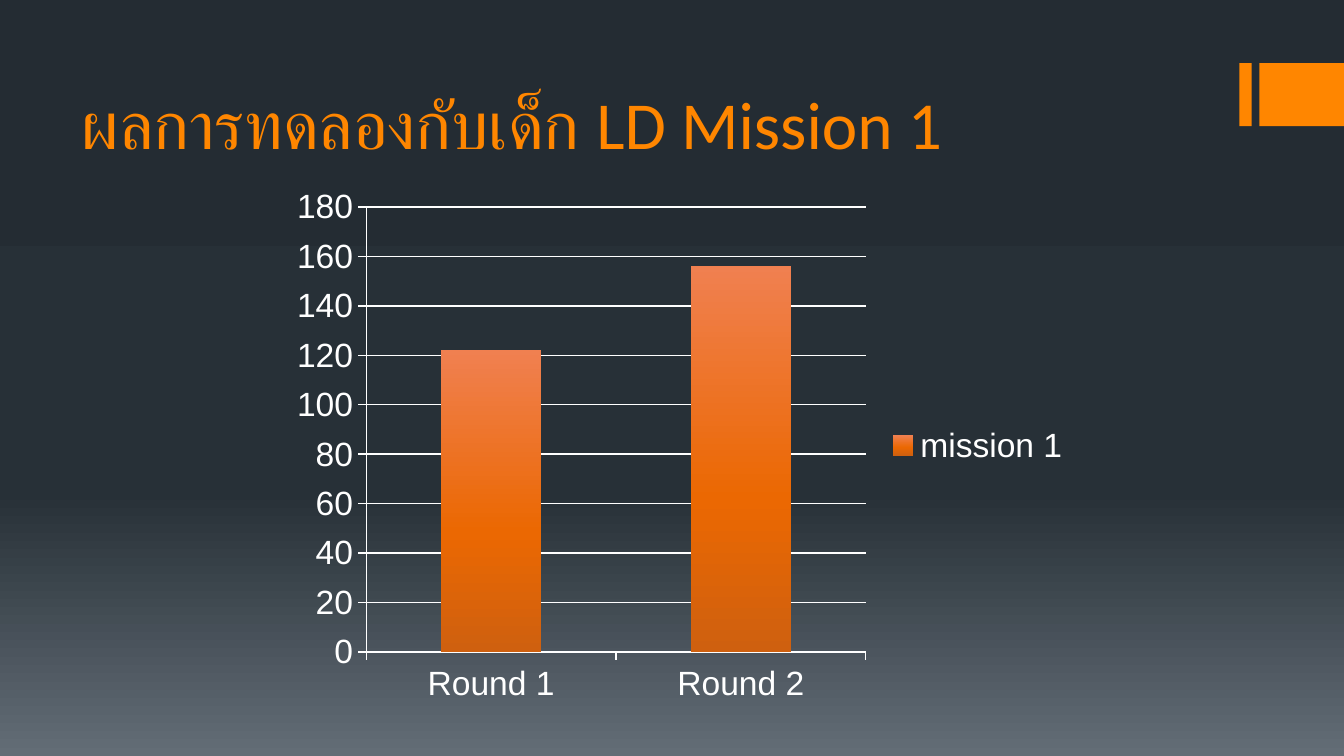
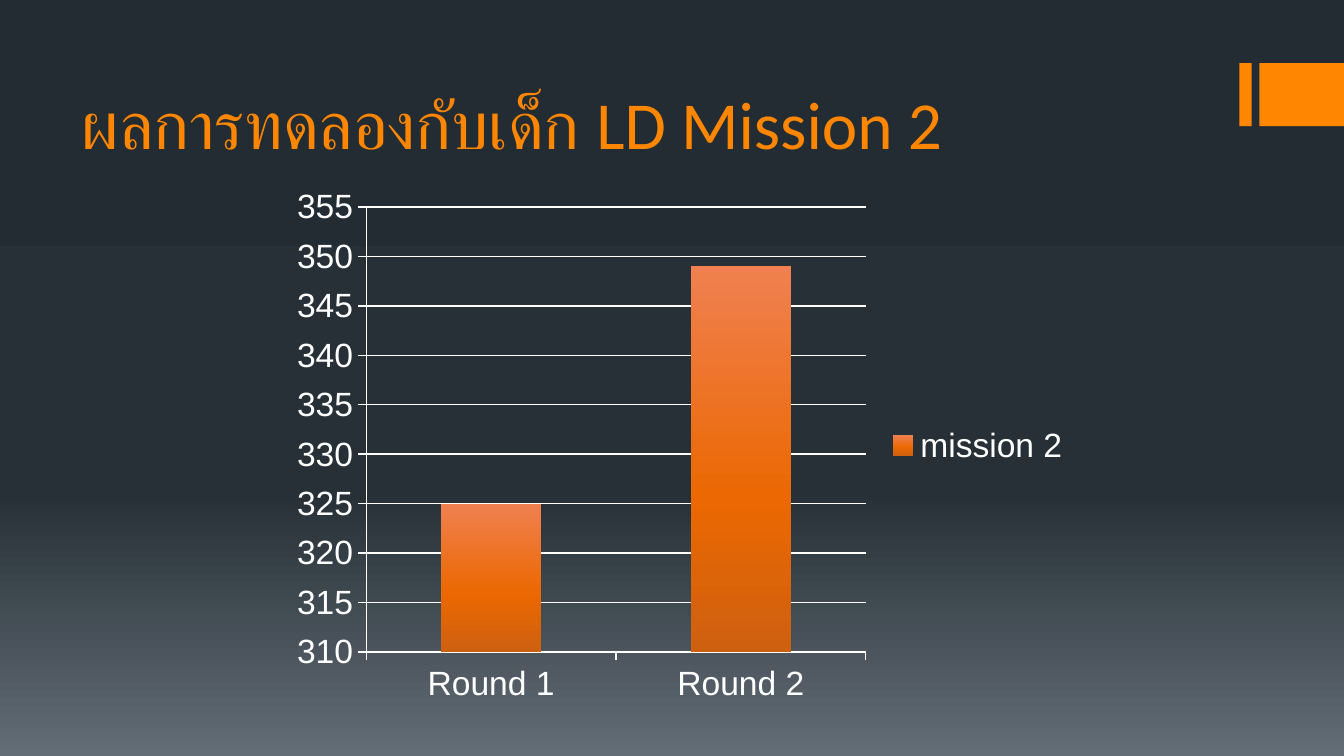
from lxml import etree
from pptx import Presentation
from pptx.chart.data import CategoryChartData
from pptx.dml.color import RGBColor
from pptx.enum import chart as charts, shapes, text
from pptx.oxml import ns
from pptx.util import Pt

ORANGE = RGBColor(0xFF, 0x86, 0x00)
WHITE = RGBColor(0xFF, 0xFF, 0xFF)

# Gradient stops: position in percent, colour
BACKGROUND = [(0, RGBColor(0x24, 0x2C, 0x33)), (65, RGBColor(0x27, 0x30, 0x37)),
              (100, RGBColor(0x63, 0x6D, 0x76))]
COLUMN = [(0, RGBColor(0xF0, 0x80, 0x50)), (60, RGBColor(0xEB, 0x68, 0x02)),
          (100, RGBColor(0xCF, 0x60, 0x0F))]

WIDTH, HEIGHT = 720, 405
TAB_TOP, TAB_HEIGHT = 33.84, 33.84
TABS = [(664, 6.5), (674.64, WIDTH - 674.64)]  # left, width
TITLE_BOX = (36.72, 26.64, 648, 67.68)
CHART_BOX = (150.48, 95.04, 430.56, 287.28)

TITLE_FRAME = dict(word_wrap=True, vertical_anchor=text.MSO_ANCHOR.BOTTOM,
                   margin_left=Pt(7.2), margin_right=Pt(7.2),
                   margin_top=Pt(7.2), margin_bottom=Pt(7.2))
TITLE_FONT = dict(name="Calibri", size=Pt(36))
CHART_FONT = dict(name="Arial", size=Pt(18))

ROUNDS = ["Round 1", "Round 2"]
# Mission number, values, axis minimum, maximum and step
MISSIONS = [(1, (122, 156), 0, 180, 20),
            (2, (325, 349), 310, 355, 5)]


def apply(target, values):
    for name, value in values.items():
        setattr(target, name, value)


def style_font(font, values, color):
    apply(font, values)
    font.color.rgb = color


def fill_gradient(fill, element, stops):
    """Fill with a top-to-bottom gradient of any number of stops."""
    fill.gradient()
    fill.gradient_angle = 270
    stop_list = element.find(".//" + ns.qn("a:gsLst"))
    for old in list(stop_list):
        stop_list.remove(old)
    for position, color in stops:
        stop = etree.SubElement(stop_list, ns.qn("a:gs"), pos=str(position * 1000))
        etree.SubElement(stop, ns.qn("a:srgbClr"), val=str(color))


def add_page(deck):
    """Blank page with the shared background and corner tabs."""
    page = deck.slides.add_slide(deck.slide_layouts[6])
    fill_gradient(page.background.fill, page._element, BACKGROUND)
    for left, width in TABS:
        tab = page.shapes.add_shape(shapes.MSO_SHAPE.RECTANGLE, Pt(left), Pt(TAB_TOP),
                                    Pt(width), Pt(TAB_HEIGHT))
        tab.shadow.inherit = False
        tab.fill.solid()
        tab.fill.fore_color.rgb = ORANGE
        tab.line.fill.background()
    return page


def add_title(page, wording):
    box = page.shapes.add_textbox(*map(Pt, TITLE_BOX))
    apply(box.text_frame, TITLE_FRAME)
    span = box.text_frame.paragraphs[0].add_run()
    span.text = wording
    style_font(span.font, TITLE_FONT, ORANGE)


def style_line(line):
    line.width = Pt(0.75)
    line.color.rgb = WHITE


def add_column_chart(page, name, values, low, high, step):
    data = CategoryChartData()
    data.categories = ROUNDS
    data.add_series(name, values)
    chart = page.shapes.add_chart(charts.XL_CHART_TYPE.COLUMN_CLUSTERED,
                                  *map(Pt, CHART_BOX), data).chart
    chart.has_title = False
    style_font(chart.font, CHART_FONT, WHITE)

    # Legend
    chart.has_legend = True
    apply(chart.legend, dict(position=charts.XL_LEGEND_POSITION.RIGHT,
                             include_in_layout=False))

    # Axes and gridlines
    for axis in (chart.category_axis, chart.value_axis):
        axis.major_tick_mark = charts.XL_TICK_MARK.OUTSIDE
        style_line(axis.format.line)
    apply(chart.value_axis, dict(minimum_scale=low, maximum_scale=high,
                                 major_unit=step, has_major_gridlines=True))
    style_line(chart.value_axis.major_gridlines.format.line)

    # Columns
    plot = chart.plots[0]
    apply(plot, dict(gap_width=150, vary_by_categories=False))
    series = plot.series[0]
    fill_gradient(series.format.fill, series._element, COLUMN)


def main():
    deck = Presentation()
    apply(deck, dict(slide_width=Pt(WIDTH), slide_height=Pt(HEIGHT)))
    for number, values, low, high, step in MISSIONS:
        page = add_page(deck)
        add_title(page, f"ผลการทดลองกับเด็ก LD Mission {number}")
        add_column_chart(page, f"mission {number}", values, low, high, step)
    deck.save("out.pptx")


if __name__ == "__main__":
    main()
